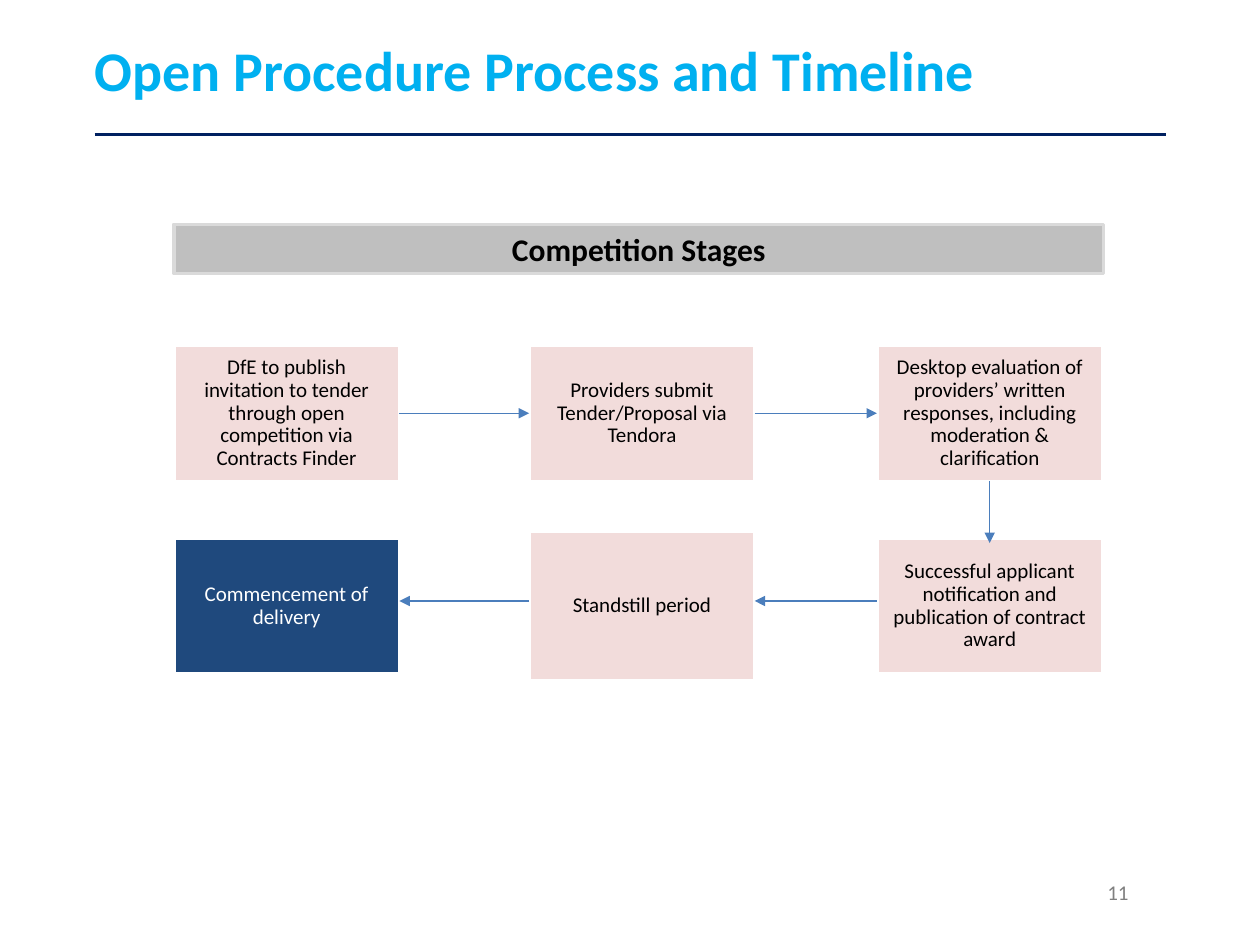
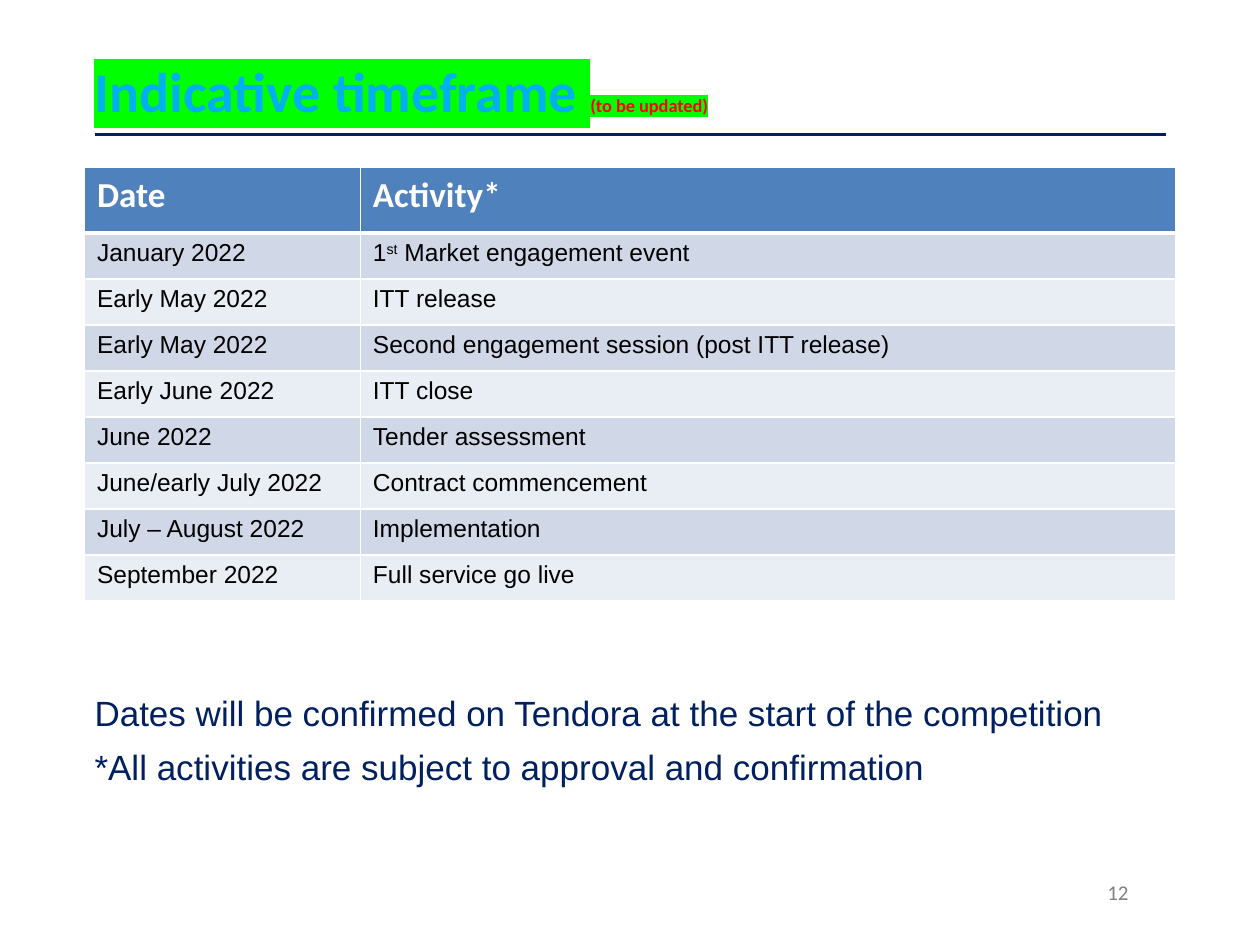
from lxml import etree
from pptx import Presentation
from pptx.dml.color import RGBColor
from pptx.enum.shapes import MSO_CONNECTOR, MSO_SHAPE
from pptx.enum.text import MSO_ANCHOR, PP_ALIGN
from pptx.oxml.ns import qn
from pptx.util import Inches, Pt

RECTANGLE = MSO_SHAPE.RECTANGLE
STRAIGHT = MSO_CONNECTOR.STRAIGHT
TOP, MIDDLE = MSO_ANCHOR.TOP, MSO_ANCHOR.MIDDLE
LEFT, CENTER = PP_ALIGN.LEFT, PP_ALIGN.CENTER

WHITE = RGBColor(0xFF, 0xFF, 0xFF)
BLACK = RGBColor(0x00, 0x00, 0x00)
NAVY = RGBColor(0x00, 0x20, 0x60)
SKY = RGBColor(0x00, 0xB0, 0xF0)
RED = RGBColor(0xFF, 0x00, 0x00)
GREEN = RGBColor(0x00, 0xFF, 0x00)
PAGE_GREY = RGBColor(0x80, 0x80, 0x80)
BAND_GREY = RGBColor(0xBF, 0xBF, 0xBF)
BAND_EDGE = RGBColor(0xDA, 0xDA, 0xDA)
STEP_PINK = RGBColor(0xF2, 0xDC, 0xDB)
FINAL_BLUE = RGBColor(0x1F, 0x49, 0x7D)
ARROW_BLUE = RGBColor(0x4B, 0x7E, 0xBC)
HEADER_BLUE = RGBColor(0x4F, 0x81, 0xBD)
ROW_FILLS = (RGBColor(0xD0, 0xD8, 0xE8), RGBColor(0xE9, 0xED, 0xF4))

HEADING_FONT, BODY_FONT = "Calibri", "Arial"
MARGIN, CONTENT_WIDTH = 0.75, 8.5

# Competition stages in flow order: column, row, wording
STAGES = [
    (0, 0, "DfE to publish invitation to tender through open competition via Contracts Finder"),
    (1, 0, "Providers submit Tender/Proposal via Tendora"),
    (2, 0, "Desktop evaluation of providers’ written responses, including moderation & clarification"),
    (2, 1, "Successful applicant notification and publication of contract award"),
    (1, 1, "Standstill period"),
    (0, 1, "Commencement of delivery"),
]

TIMEFRAME = [
    ("January 2022", ("1", "st", " Market engagement event")),
    ("Early May 2022", ("ITT release",)),
    ("Early May 2022", ("Second engagement session (post ITT release)",)),
    ("Early June 2022", ("ITT close",)),
    ("June 2022", ("Tender assessment",)),
    ("June/early July 2022", ("Contract commencement",)),
    ("July – August 2022", ("Implementation",)),
    ("September 2022", ("Full service go live",)),
]


def add_run(paragraph, text, size, color, font=HEADING_FONT, bold=False, highlight=None, raised=False):
    run = paragraph.add_run()
    run.text = text
    run.font.size = Pt(size)
    run.font.bold = bold
    run.font.color.rgb = color
    properties = run.font._element
    if highlight is not None:
        mark = etree.SubElement(properties, qn("a:highlight"))
        etree.SubElement(mark, qn("a:srgbClr"), val=str(highlight))
    if raised:
        properties.set("baseline", "30000")
    run.font.name = font


def set_frame(shape, anchor, insets):
    frame = shape.text_frame
    frame.word_wrap = True
    frame.vertical_anchor = anchor
    (frame.margin_left, frame.margin_top,
     frame.margin_right, frame.margin_bottom) = map(Inches, insets)
    return frame


def add_text_box(slide, box, anchor=TOP, insets=(0.1, 0.05, 0.1, 0.05)):
    return set_frame(slide.shapes.add_textbox(*map(Inches, box)), anchor, insets)


def add_panel(slide, box, fill, edge, inset):
    panel = slide.shapes.add_shape(RECTANGLE, *map(Inches, box))
    panel.shadow.inherit = False
    panel.fill.solid()
    panel.fill.fore_color.rgb = fill
    panel.line.color.rgb = edge
    panel.line.width = Pt(2)
    paragraph = set_frame(panel, MIDDLE, (inset,) * 4).paragraphs[0]
    paragraph.alignment = CENTER
    return paragraph


def add_line(slide, start, end, color, width, arrow=False):
    line = slide.shapes.add_connector(STRAIGHT, *map(Inches, start + end))
    line.line.color.rgb = color
    line.line.width = Pt(width)
    if arrow:
        etree.SubElement(line.line._get_or_add_ln(), qn("a:tailEnd"), type="triangle")
    etree.SubElement(line._element.spPr, qn("a:effectLst"))


def add_base(prs, number, title_top):
    """Add a slide with its rule and page number; return it with the title paragraph."""
    slide = prs.slides.add_slide(prs.slide_layouts[6])
    add_line(slide, (MARGIN, 1.07), (MARGIN + CONTENT_WIDTH, 1.07), NAVY, 1.5)
    title = add_text_box(slide, (MARGIN, title_top, CONTENT_WIDTH, 0.71), MIDDLE, (0, 0.05, 0.04, 0.05))
    page = add_text_box(slide, (8.69, 6.93, 0.56, 0.4))
    add_run(page.paragraphs[0], str(number), 12, PAGE_GREY)
    return slide, title.paragraphs[0]


def add_stage_flow(slide, left, top):
    width, height = 1.79, 1.08
    columns, rows = (0, 2.82, 5.58), (0, 1.53)
    boxes = []
    for column, row, wording in STAGES:
        is_final = wording == STAGES[-1][2]
        extra = 0.05 if (column, row) == (1, 1) else 0
        box = (left + columns[column], top + rows[row] - extra, width, height + 2 * extra)
        boxes.append(box)
        paragraph = add_panel(slide, box, FINAL_BLUE if is_final else STEP_PINK, WHITE, 0.09)
        paragraph.line_spacing = 0.9
        add_run(paragraph, wording, 12, WHITE if is_final else BLACK)

    # Arrows join facing edges of consecutive stages
    for (x, y, w, h), (next_x, next_y, next_w, next_h) in zip(boxes, boxes[1:]):
        middle = y + h / 2
        if next_x == x:
            start, end = (x + w / 2, y + h), (x + w / 2, next_y + 0.04)
        elif next_x > x:
            start, end = (x + w, middle), (next_x, middle)
        else:
            start, end = (x, middle - 0.04), (next_x + next_w, middle - 0.04)
        add_line(slide, start, end, ARROW_BLUE, 0.75, arrow=True)


def style_cell(cell, fill, bottom_width):
    cell.fill.solid()
    cell.fill.fore_color.rgb = fill
    properties = cell._tc.get_or_add_tcPr()
    for position, (side, width) in enumerate(
            (("lnL", 1), ("lnR", 1), ("lnT", 1), ("lnB", bottom_width))):
        border = etree.Element(qn(f"a:{side}"), w=str(Pt(width)))
        paint = etree.SubElement(border, qn("a:solidFill"))
        etree.SubElement(paint, qn("a:srgbClr"), val=str(WHITE))
        properties.insert(position, border)


def add_timeframe_table(slide, left, top):
    widths, header_height, row_height = (2.19, 6.47), 0.52, 0.365
    row_count = len(TIMEFRAME) + 1
    height = header_height + row_height * len(TIMEFRAME)
    table = slide.shapes.add_table(
        row_count, 2, *map(Inches, (left, top, sum(widths), height))).table
    for column, width in zip(table.columns, widths):
        column.width = Inches(width)
    for index, row in enumerate(table.rows):
        row.height = Inches(row_height if index else header_height)

    for cell, heading in zip(table.rows[0].cells, ("Date", "Activity*")):
        style_cell(cell, HEADER_BLUE, 3)
        add_run(cell.text_frame.paragraphs[0], heading, 20, WHITE, bold=True)

    for index, (date, activity) in enumerate(TIMEFRAME):
        for cell, parts in zip(table.rows[index + 1].cells, ((date,), activity)):
            style_cell(cell, ROW_FILLS[index % 2], 1)
            paragraph = cell.text_frame.paragraphs[0]
            for part in parts:
                add_run(paragraph, part, 14, BLACK, BODY_FONT, raised=part == "st")


def add_closing_notes(slide, box):
    frame = add_text_box(slide, box, insets=(0.04, 0.05, 0.1, 0.05))
    notes = ("Dates will be confirmed on Tendora at the start of the competition",
             "*All activities are subject to approval and confirmation")
    for index, note in enumerate(notes):
        paragraph = frame.add_paragraph() if index else frame.paragraphs[0]
        paragraph.alignment = LEFT
        paragraph.space_after = Pt(7)
        add_run(paragraph, note, 20, NAVY, BODY_FONT)


def build_process_slide(prs):
    slide, title = add_base(prs, 11, 0.19)
    add_run(title, "Open Procedure Process and Timeline", 32, SKY, bold=True)
    band = add_panel(slide, (1.38, 1.78, 7.38, 0.39), BAND_GREY, BAND_EDGE, 0.03)
    add_run(band, "Competition Stages", 18, BLACK, bold=True)
    add_stage_flow(slide, 1.38, 2.74)


def build_timeframe_slide(prs):
    slide, title = add_base(prs, 12, 0.36)
    add_run(title, "Indicative timeframe ", 32, SKY, bold=True, highlight=GREEN)
    add_run(title, "(to be updated)", 10.5, RED, bold=True, highlight=GREEN)
    add_timeframe_table(slide, 0.67, 1.33)
    add_closing_notes(slide, (0.71, 5.44, 8.58, 0.95))


def main():
    prs = Presentation()
    prs.slide_width, prs.slide_height = Inches(10), Inches(7.5)
    build_process_slide(prs)
    build_timeframe_slide(prs)
    prs.save("out.pptx")


if __name__ == "__main__":
    main()
